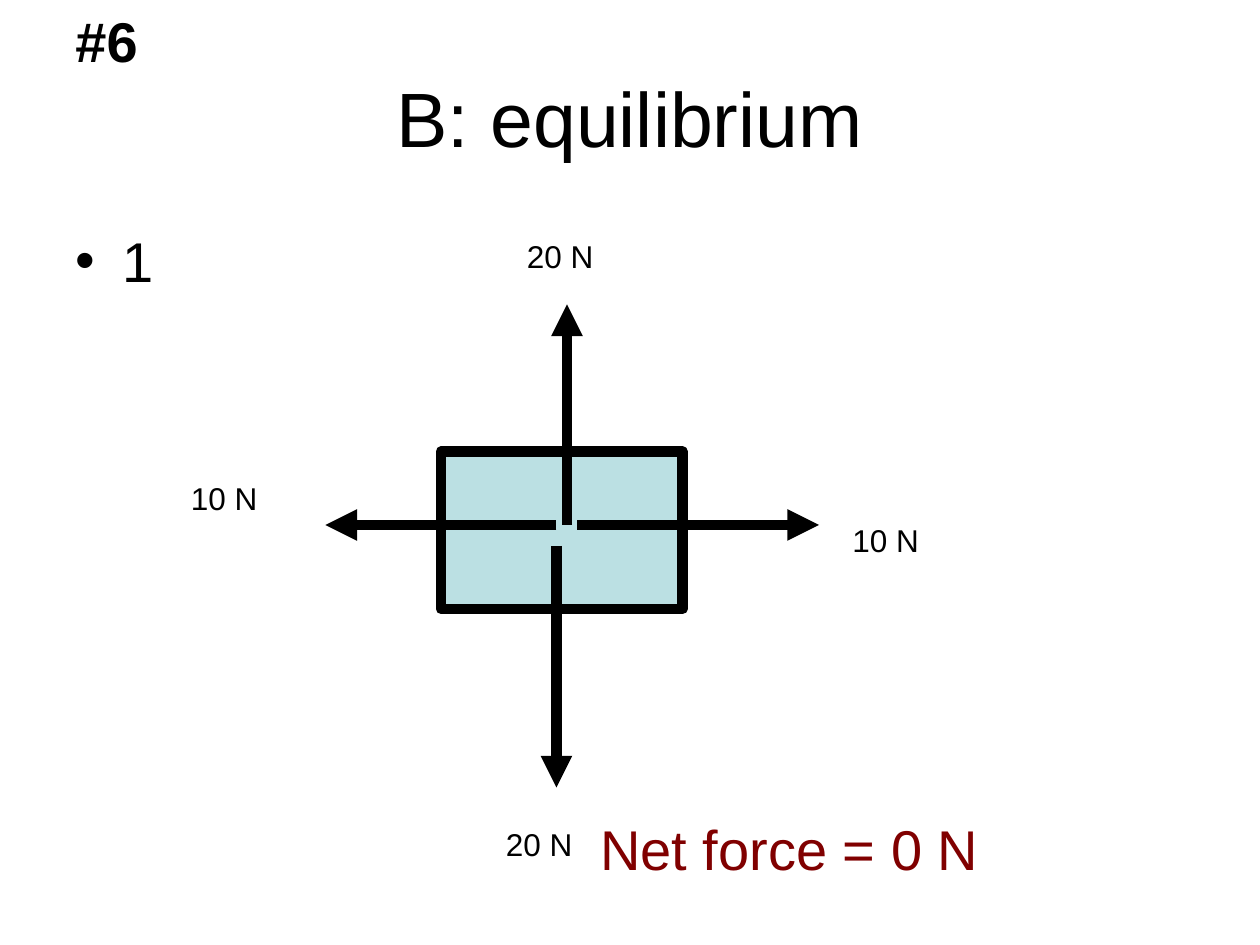
from typing import NamedTuple

from lxml.etree import SubElement
from pptx import Presentation
from pptx.dml.color import RGBColor
from pptx.enum.shapes import MSO_CONNECTOR, MSO_SHAPE
from pptx.enum.text import MSO_ANCHOR, MSO_AUTO_SIZE, PP_ALIGN
from pptx.oxml.ns import qn
from pptx.util import Emu, Pt

EMU_PER_PX = 9525  # 96 px to the inch
FONT = "Arial"
BLACK = RGBColor(0x00, 0x00, 0x00)
MAROON = RGBColor(0x80, 0x00, 0x00)
PALE_TEAL = RGBColor(0xBB, 0xE0, 0xE3)
STROKE = Pt(6)


class Box(NamedTuple):
    left: int
    top: int
    width: int
    height: int


class Force(NamedTuple):
    start: tuple[int, int]
    end: tuple[int, int]
    label: str
    label_box: Box


TITLE_BOX = Box(48, 29, 864, 120)
BODY_BOX = Box(48, 168, 864, 475)
BLOCK_BOX = Box(336, 344, 184, 120)
NUMBER_BOX = Box(48, 0, 112, 60)
NET_FORCE_BOX = Box(448, 616, 512, 60)

FORCES = (
    Force((424, 416), (424, 600), "20 N", Box(376, 624, 104, 38)),
    Force((432, 400), (432, 232), "20 N", Box(392, 176, 120, 38)),
    Force((440, 400), (624, 400), "10 N", Box(640, 392, 96, 38)),
    Force((424, 400), (248, 400), "10 N", Box(136, 360, 104, 38)),
)


def px(*lengths: int) -> list[Emu]:
    return [Emu(length * EMU_PER_PX) for length in lengths]


def write(shape, text: str, *, size: int = 18, color: RGBColor = BLACK,
          bold: bool = False, align=PP_ALIGN.LEFT, anchor=MSO_ANCHOR.TOP,
          auto_size=MSO_AUTO_SIZE.SHAPE_TO_FIT_TEXT) -> None:
    frame = shape.text_frame
    frame.word_wrap = True
    frame.auto_size = auto_size
    frame.vertical_anchor = anchor
    paragraph = frame.paragraphs[0]
    paragraph.alignment = align
    run = paragraph.add_run()
    run.text = text
    run.font.name = FONT
    run.font.size = Pt(size)
    run.font.bold = bold
    run.font.color.rgb = color


def fill_placeholder(placeholder, box: Box, text: str, **text_format) -> None:
    placeholder.left, placeholder.top, placeholder.width, placeholder.height = px(*box)
    write(placeholder, text, auto_size=MSO_AUTO_SIZE.NONE, **text_format)


def add_label(slide, box: Box, text: str, **text_format) -> None:
    write(slide.shapes.add_textbox(*px(*box)), text, **text_format)


def add_block(slide, box: Box) -> None:
    block = slide.shapes.add_shape(MSO_SHAPE.RECTANGLE, *px(*box))
    block.shadow.inherit = False
    block.fill.solid()
    block.fill.fore_color.rgb = PALE_TEAL
    block.line.color.rgb = BLACK
    block.line.width = STROKE


def add_arrow(slide, force: Force) -> None:
    arrow = slide.shapes.add_connector(
        MSO_CONNECTOR.STRAIGHT, *px(*force.start, *force.end))
    arrow.line.color.rgb = BLACK
    arrow.line.width = STROKE
    SubElement(arrow.line._get_or_add_ln(), qn("a:tailEnd"), type="triangle")
    SubElement(arrow._element.spPr, qn("a:effectLst"))


def main() -> None:
    deck = Presentation()
    deck.slide_width, deck.slide_height = px(960, 720)
    slide = deck.slides.add_slide(deck.slide_layouts[1])

    fill_placeholder(slide.shapes.title, TITLE_BOX, "B: equilibrium", size=44,
                     align=PP_ALIGN.CENTER, anchor=MSO_ANCHOR.MIDDLE)
    fill_placeholder(slide.placeholders[1], BODY_BOX, "1", size=32)

    add_block(slide, BLOCK_BOX)
    for force in FORCES:
        add_arrow(slide, force)
    for force in FORCES:
        add_label(slide, force.label_box, force.label)

    add_label(slide, NUMBER_BOX, "#6", size=32, bold=True)
    add_label(slide, NET_FORCE_BOX, "Net force = 0 N", size=32, color=MAROON)
    deck.save("out.pptx")


if __name__ == "__main__":
    main()
